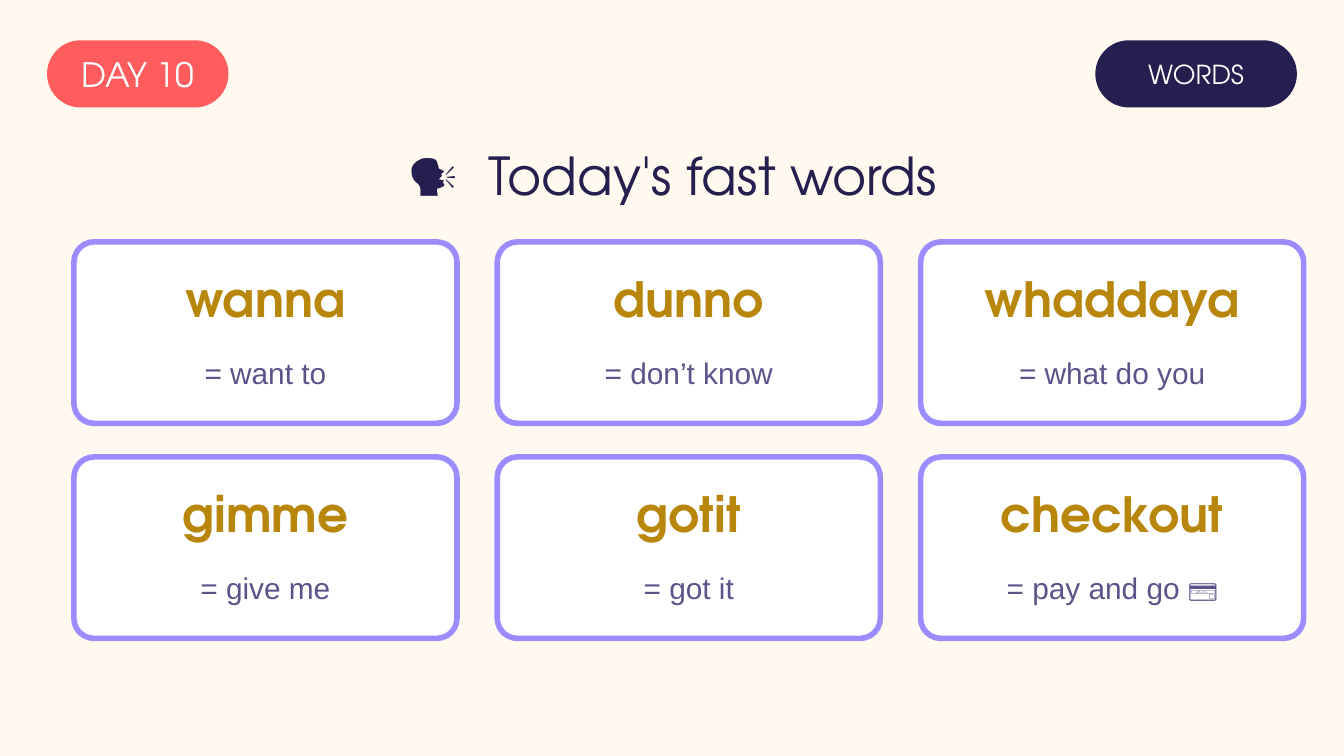
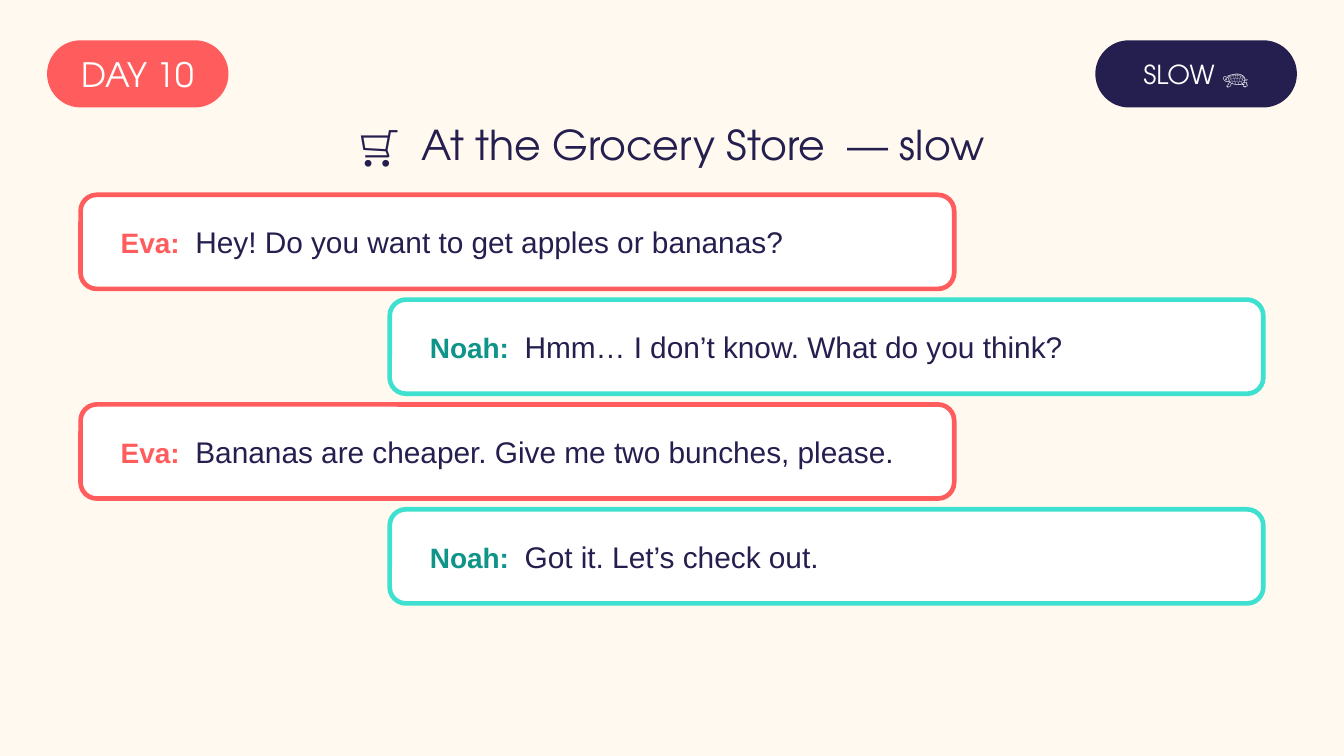
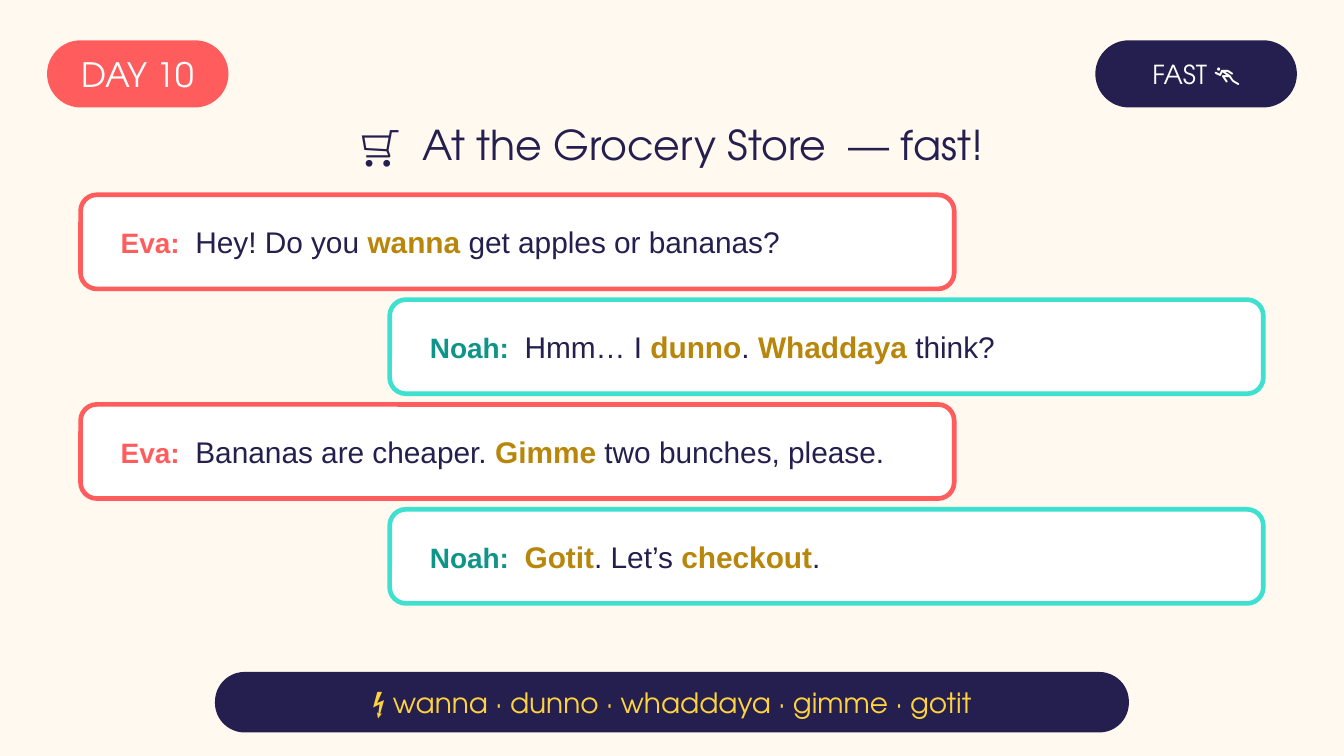
from itertools import cycle

from pptx import Presentation
from pptx import util as u
from pptx.dml import color
from pptx.enum import shapes, text

DISPLAY, BODY = "TeX Gyre Adventor", "Arial"
CREAM, WHITE, NAVY = "FFF9EF", "FFFFFF", "241F4E"
CORAL, TURQUOISE, TEAL = "FF5D5D", "3EE0CF", "0E9488"
LILAC, MUTED, GOLD, YELLOW = "9B8CFF", "5A548A", "B8860B", "FFD23F"

CENTER, LEFT = text.PP_ALIGN.CENTER, text.PP_ALIGN.LEFT
SPEAKERS = (
    {"name": "Eva:  ", "left": 0.6, "border": CORAL, "color": CORAL},
    {"name": "Noah:  ", "left": 2.9, "border": TURQUOISE, "color": TEAL},
)
FAST_WORDS = (
    ("wanna", "= want to"),
    ("dunno", "= don’t know"),
    ("whaddaya", "= what do you"),
    ("gimme", "= give me"),
    ("gotit", "= got it"),
    ("checkout", "= pay and go 💳"),
)
SLOW_LINES = (
    "Hey! Do you want to get apples or bananas?",
    "Hmm… I don’t know. What do you think?",
    "Bananas are cheaper. Give me two bunches, please.",
    "Got it. Let’s check out.",
)
FAST_LINES = (
    "Hey! Do you *wanna* get apples or bananas?",
    "Hmm… I *dunno*. *Whaddaya* think?",
    "Bananas are cheaper. *Gimme* two bunches, please.",
    "*Gotit*. Let’s *checkout*.",
)


def rgb(value):
    return color.RGBColor.from_string(value)


def style(size, ink, name=DISPLAY, bold=False):
    return {"size": u.Pt(size), "color": ink, "name": name, "bold": bold}


def add_text(page, area, spans, align=CENTER, inset=True):
    box = page.shapes.add_textbox(*map(u.Inches, area))
    frame = box.text_frame
    layout = {"word_wrap": True, "vertical_anchor": text.MSO_ANCHOR.MIDDLE}
    if not inset:
        layout.update(margin_left=0, margin_top=0, margin_right=0, margin_bottom=0)
    for key, value in layout.items():
        setattr(frame, key, value)
    para = frame.paragraphs[0]
    para.alignment = align
    for words, look in spans:
        span = para.add_run()
        span.text = words
        for key, value in look.items():
            if key == "color":
                span.font.color.rgb = rgb(value)
            else:
                setattr(span.font, key, value)


def add_panel(page, area, radius, fill, border=None, width=0):
    panel = page.shapes.add_shape(
        shapes.MSO_SHAPE.ROUNDED_RECTANGLE, *map(u.Inches, area))
    panel.adjustments[0] = radius / area[3]
    panel.shadow.inherit = False
    panel.fill.solid()
    panel.fill.fore_color.rgb = rgb(fill)
    if border:
        panel.line.color.rgb = rgb(border)
        panel.line.width = u.Pt(width)
    else:
        panel.line.fill.background()


def add_pill(page, area, radius, fill, words, size, ink=WHITE):
    add_panel(page, area, radius, fill)
    add_text(page, area, [(words, style(size, ink))], inset=False)


def add_page(deck, tag, title, top, height, size):
    page = deck.slides.add_slide(deck.slide_layouts[6])
    page.background.fill.solid()
    page.background.fill.fore_color.rgb = rgb(CREAM)
    add_pill(page, (0.35, 0.3, 1.35, 0.5), 0.25, CORAL, "DAY 10", 18)
    add_pill(page, (8.15, 0.3, 1.5, 0.5), 0.25, NAVY, tag, 14)
    add_text(page, (0, top, 10, height), [(title, style(size, NAVY))])
    return page


def add_word_card(page, left, top, word, meaning):
    add_panel(page, (left, top, 2.85, 1.35), 0.15, WHITE, LILAC, 3)
    add_text(page, (left, top + 0.12, 2.85, 0.6),
             [(word, style(26, GOLD, bold=True))])
    add_text(page, (left, top + 0.75, 2.85, 0.45),
             [(meaning, style(16, MUTED, BODY))])


def add_bubble(page, top, speaker, line):
    left = speaker["left"]
    add_panel(page, (left, top, 6.5, 0.7), 0.12, WHITE, speaker["border"], 2.5)
    spans = [(speaker["name"], style(15, speaker["color"], BODY, True))]
    looks = cycle((style(16, NAVY, BODY), style(16, GOLD, BODY, True)))
    spans += [pair for pair in zip(line.split("*"), looks) if pair[0]]
    add_text(page, (left + 0.2, top, 6.1, 0.7), spans, LEFT)


def add_words_page(deck):
    page = add_page(deck, "WORDS", "🗣️  Today's fast words", 0.95, 0.7, 28)
    for index, (word, meaning) in enumerate(FAST_WORDS):
        row, column = divmod(index, 3)
        add_word_card(page, 0.55 + 3.15 * column, 1.8 + 1.6 * row, word, meaning)


def add_dialogue_page(deck, tag, pace, lines):
    title = f"🛒  At the Grocery Store  — {pace}"
    page = add_page(deck, tag, title, 0.82, 0.5, 22)
    for index, (line, speaker) in enumerate(zip(lines, cycle(SPEAKERS))):
        add_bubble(page, 1.45 + 0.78 * index, speaker, line)
    return page


def main():
    deck = Presentation()
    deck.slide_width, deck.slide_height = u.Inches(10), u.Inches(10 * 9 / 16)
    add_words_page(deck)
    add_dialogue_page(deck, "SLOW 🐢", "slow", SLOW_LINES)
    page = add_dialogue_page(deck, "FAST 🏃", "fast!", FAST_LINES)
    recap = "⚡ " + " · ".join(word for word, _ in FAST_WORDS[:5])
    add_pill(page, (1.6, 5, 6.8, 0.45), 0.22, NAVY, recap, 15, YELLOW)
    deck.save("out.pptx")


if __name__ == "__main__":
    main()
